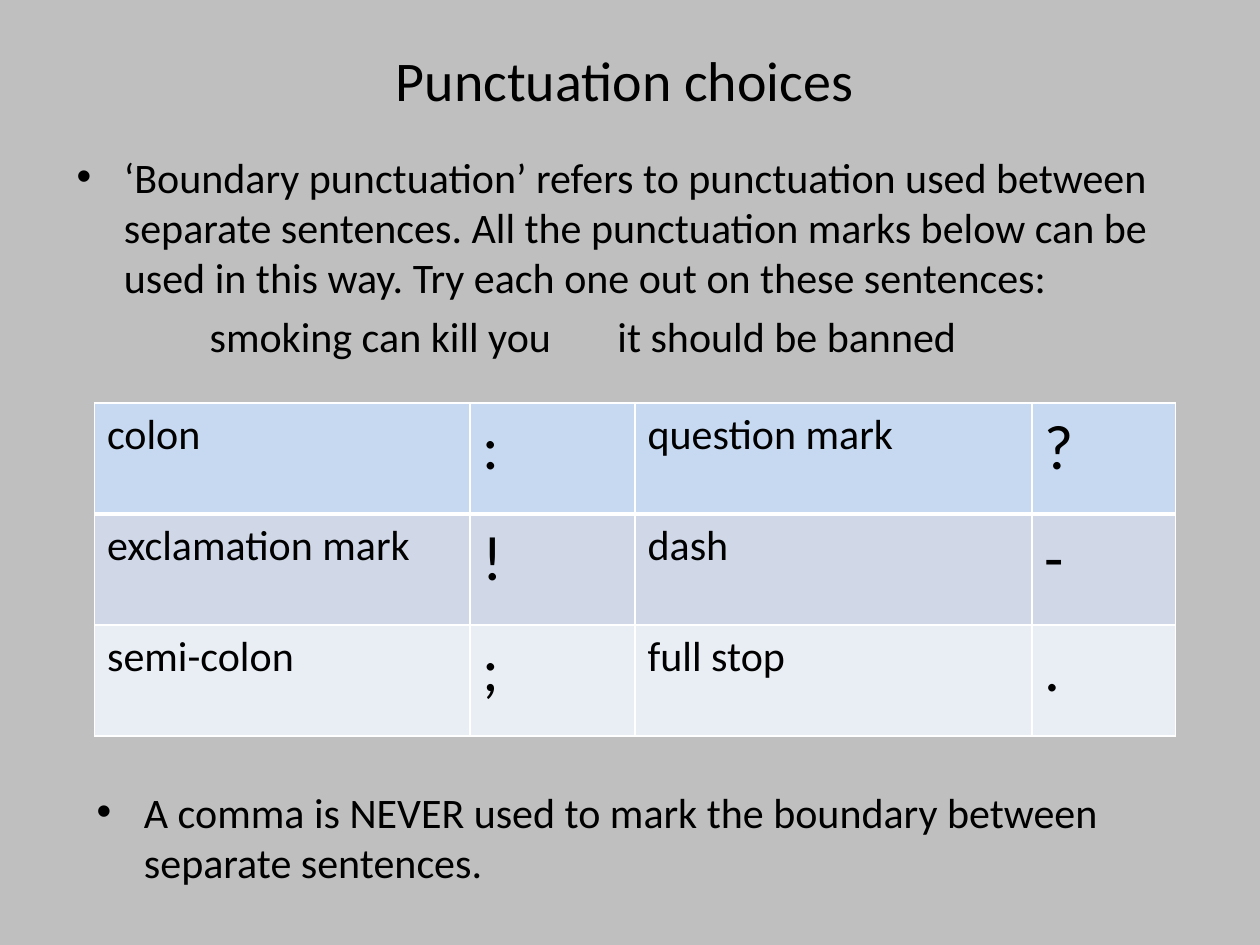
from dataclasses import dataclass
from lxml.etree import SubElement
from pptx import Presentation
from pptx.dml.color import RGBColor
from pptx.enum.text import MSO_ANCHOR, PP_ALIGN
from pptx.oxml import parse_xml
from pptx.oxml.ns import nsdecls, qn
from pptx.util import Pt


@dataclass(frozen=True)
class Theme:
    font: str = "Calibri"
    background: str = "BFBFBF"
    text: str = "000000"
    border: str = "FFFFFF"
    rows: tuple = ("C6D9F1", "D0D8E8", "E9EDF4")
    title: int = 32
    body: int = 24
    mark: int = 36


theme = Theme()


def style_text(para, size):
    for span in para.runs:
        span.font.name = theme.font
        span.font.size = Pt(size)
        span.font.bold = False
        span.font.color.rgb = RGBColor.from_string(theme.text)


def add_text(left, top, width, height, text, size, bullet=False):
    box = page.shapes.add_textbox(Pt(left), Pt(top), Pt(width), Pt(height))
    frame = box.text_frame
    frame.word_wrap = True
    frame.text = text
    para = frame.paragraphs[0]
    style_text(para, size)
    if bullet:
        properties = para._p.get_or_add_pPr()
        properties.set("marL", str(Pt(27)))
        properties.set("indent", str(Pt(-27)))
        SubElement(properties, qn("a:buFont"), typeface="Arial")
        SubElement(properties, qn("a:buChar"), char="•")
    return frame


deck = Presentation()
deck.slide_width, deck.slide_height = Pt(720), Pt(540)
page = deck.slides.add_slide(deck.slide_layouts[6])
page.background.fill.solid()
page.background.fill.fore_color.rgb = RGBColor.from_string(theme.background)

# Title
title = add_text(36.7, 0, 648, 90, "Punctuation choices ", theme.title)
title.vertical_anchor = MSO_ANCHOR.MIDDLE
title.paragraphs[0].alignment = PP_ALIGN.CENTER

# Explanation, with the two example sentences set apart by tab stops
explanation = add_text(
    36.7, 82.8, 663, 130,
    "‘Boundary punctuation’ refers to punctuation used between separate sentences. "
    "All the punctuation marks below can be used in this way. "
    "Try each one out on these sentences:",
    theme.body, bullet=True)
example = explanation.add_paragraph()
example.text = "\tsmoking can kill you\tit should be banned"
style_text(example, theme.body)
for para in explanation.paragraphs:
    para.space_before = Pt(4.8)
tab_stops = SubElement(example._p.get_or_add_pPr(), qn("a:tabLst"))
for position in (76, 309):
    SubElement(tab_stops, qn("a:tab"), pos=str(Pt(position)), algn="l")

# Table of punctuation marks
marks = [
    ("colon", ":", "question mark", "?"),
    ("exclamation mark", "!", "dash", "-"),
    ("semi-colon", ";", "full stop", "."),
]
column_widths = (214.6, 94.3, 226.8, 82.1)
row_height = 63.36
table = page.shapes.add_table(
    len(marks), len(column_widths), Pt(54), Pt(230.4),
    Pt(sum(column_widths)), Pt(row_height * len(marks))).table
table.first_row = table.horz_banding = False
for column, width in zip(table.columns, column_widths):
    column.width = Pt(width)

for row_index, row_texts in enumerate(marks):
    table.rows[row_index].height = Pt(row_height)
    for column_index, text in enumerate(row_texts):
        cell = table.cell(row_index, column_index)
        cell.text = text
        style_text(cell.text_frame.paragraphs[0], theme.mark if column_index % 2 else theme.body)
        cell.fill.solid()
        cell.fill.fore_color.rgb = RGBColor.from_string(theme.rows[row_index])
        # The line under the first row is heavier
        borders = {"L": 1, "R": 1, "T": 3 if row_index == 1 else 1, "B": 3 if row_index == 0 else 1}
        for order, (side, weight) in enumerate(borders.items()):
            line = parse_xml(
                f'<a:ln{side} {nsdecls("a")} w="{Pt(weight)}"><a:solidFill>'
                f'<a:srgbClr val="{theme.border}"/></a:solidFill></a:ln{side}>')
            cell._tc.get_or_add_tcPr().insert(order, line)

# Closing rule
add_text(
    48.2, 445.7, 640.8, 65.5,
    "A comma is NEVER used to mark the boundary between separate sentences.",
    theme.body, bullet=True)

deck.save("out.pptx")
